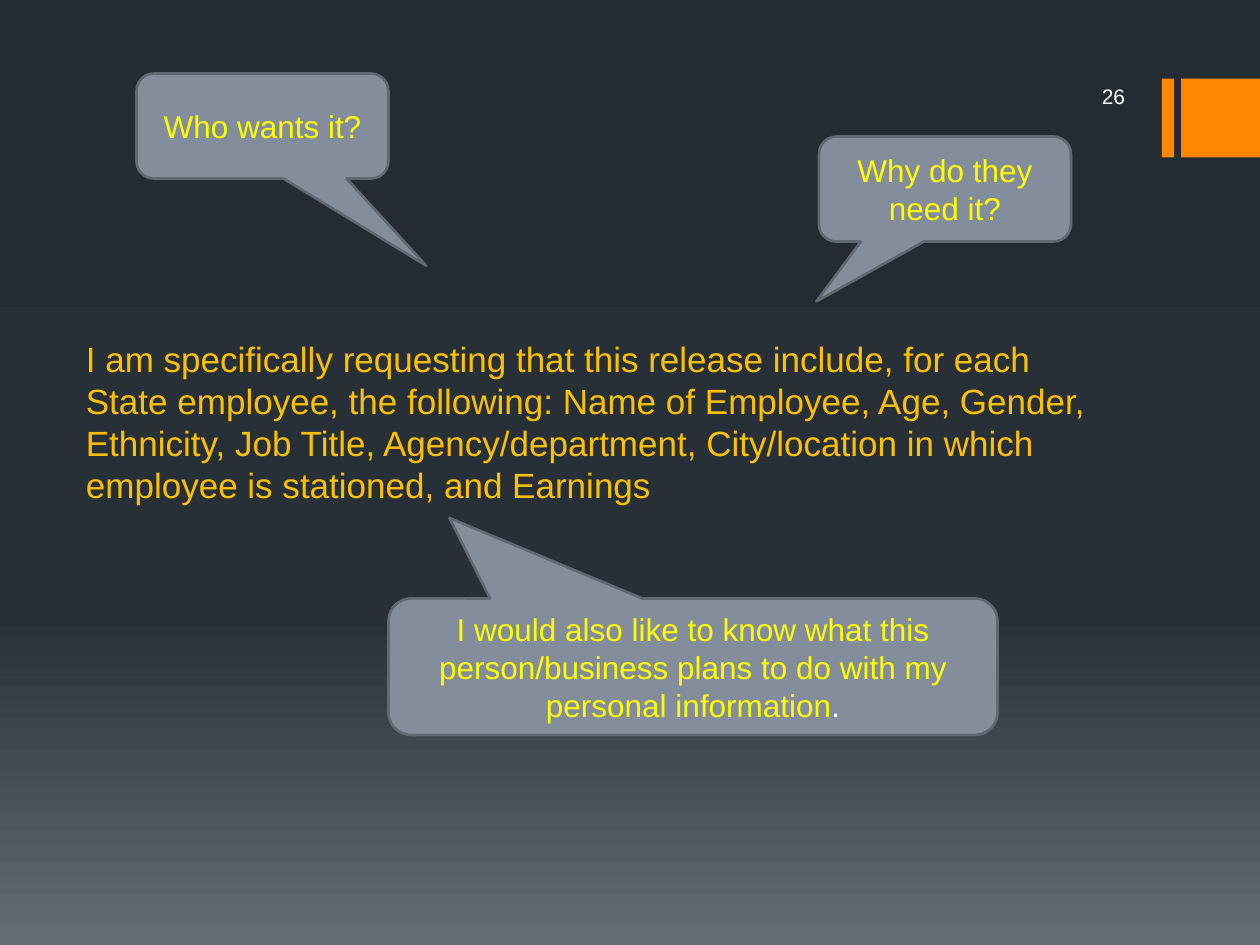
"""Build the slide on questioning a request for employee records."""
from copy import deepcopy
from dataclasses import dataclass

from pptx import Presentation
from pptx.dml.color import RGBColor
from pptx.enum import shapes, text
from pptx.slide import Slide
from pptx.util import Pt


@dataclass(frozen=True)
class Theme:
    font: str = "Arial"
    backdrop: tuple = ((0, "242C33"), (0.65, "273037"), (1, "636D76"))
    accent: str = "FF8600"
    request: str = "FFC000"
    question: str = "FFFF00"
    plain: str = "FFFFFF"
    bubble: str = "838D9B"
    bubble_edge: str = "616873"
    request_size: int = 20
    question_size: int = 18
    number_size: int = 12


@dataclass(frozen=True)
class Box:
    left: float
    top: float
    width: float
    height: float

    def lengths(self) -> tuple:
        return tuple(Pt(n) for n in (self.left, self.top, self.width, self.height))


@dataclass(frozen=True)
class Question:
    box: Box
    pointer: tuple
    wording: str
    ending: str = ""


THEME = Theme()
ACCENT_BARS = (Box(664, 45, 7, 45), Box(675, 45, 45, 45))
REQUEST = (
    "I am specifically requesting that this release include, for each State employee, "
    "the following: Name of Employee, Age, Gender, Ethnicity, Job Title, "
    "Agency/department, City/location in which employee is stationed, and Earnings"
)
QUESTIONS = (
    Question(Box(468, 78, 144, 60), (-0.51, 1.07), "Why do they need it?"),
    Question(Box(78, 42, 144, 60), (0.65, 1.33), "Who wants it?"),
    Question(
        Box(222, 342, 348, 78),
        (-0.4, -1.09),
        "I would also like to know what this person/business plans to do "
        "with my personal information",
        ".",
    ),
)


def paint_backdrop(slide: Slide) -> None:
    fill = slide.background.fill
    fill.gradient()
    fill.gradient_angle = 270
    stop_list = slide.element.xpath(".//a:gsLst")[0]
    stop_list.insert(1, deepcopy(stop_list[0]))
    for stop, (position, color) in zip(fill.gradient_stops, THEME.backdrop):
        stop.position = position
        stop.color.rgb = RGBColor.from_string(color)


def style(paragraph, size: int, color: str, align) -> None:
    paragraph.alignment = align
    paragraph.font.name = THEME.font
    paragraph.font.size = Pt(size)
    paragraph.font.color.rgb = RGBColor.from_string(color)


def add_shape(slide: Slide, kind, box: Box, color: str):
    shape = slide.shapes.add_shape(kind, *box.lengths())
    shape.shadow.inherit = False
    shape.fill.solid()
    shape.fill.fore_color.rgb = RGBColor.from_string(color)
    return shape


def add_accent_bar(slide: Slide, box: Box) -> None:
    bar = add_shape(slide, shapes.MSO_SHAPE.RECTANGLE, box, THEME.accent)
    bar.line.fill.background()


def add_words(slide: Slide, box: Box, wording: str, size: int, color: str, align):
    frame = slide.shapes.add_textbox(*box.lengths()).text_frame
    frame.word_wrap = True
    frame.text = wording
    style(frame.paragraphs[0], size, color, align)
    return frame


def add_question(slide: Slide, question: Question) -> None:
    bubble = add_shape(
        slide, shapes.MSO_SHAPE.ROUNDED_RECTANGULAR_CALLOUT, question.box, THEME.bubble
    )
    bubble.adjustments[0], bubble.adjustments[1] = question.pointer
    bubble.line.color.rgb = RGBColor.from_string(THEME.bubble_edge)
    bubble.line.width = Pt(1.5)
    frame = bubble.text_frame
    frame.word_wrap = True
    frame.vertical_anchor = text.MSO_ANCHOR.MIDDLE
    frame.text = question.wording
    paragraph = frame.paragraphs[0]
    style(paragraph, THEME.question_size, THEME.question, text.PP_ALIGN.CENTER)
    if question.ending:
        ending = paragraph.add_run()
        ending.text = question.ending
        ending.font.color.rgb = RGBColor.from_string(THEME.plain)


def main() -> None:
    deck = Presentation()
    deck.slide_width, deck.slide_height = Pt(720), Pt(540)
    slide = deck.slides.add_slide(deck.slide_layouts[6])
    paint_backdrop(slide)
    for bar in ACCENT_BARS:
        add_accent_bar(slide, bar)
    request = add_words(
        slide, Box(42, 168, 606, 330), REQUEST,
        THEME.request_size, THEME.request, text.PP_ALIGN.LEFT,
    )
    request.margin_top = Pt(25)
    number = add_words(
        slide, Box(576, 43, 74, 24), "26",
        THEME.number_size, THEME.plain, text.PP_ALIGN.RIGHT,
    )
    number.vertical_anchor = text.MSO_ANCHOR.MIDDLE
    for question in QUESTIONS:
        add_question(slide, question)
    deck.save("out.pptx")


if __name__ == "__main__":
    main()
